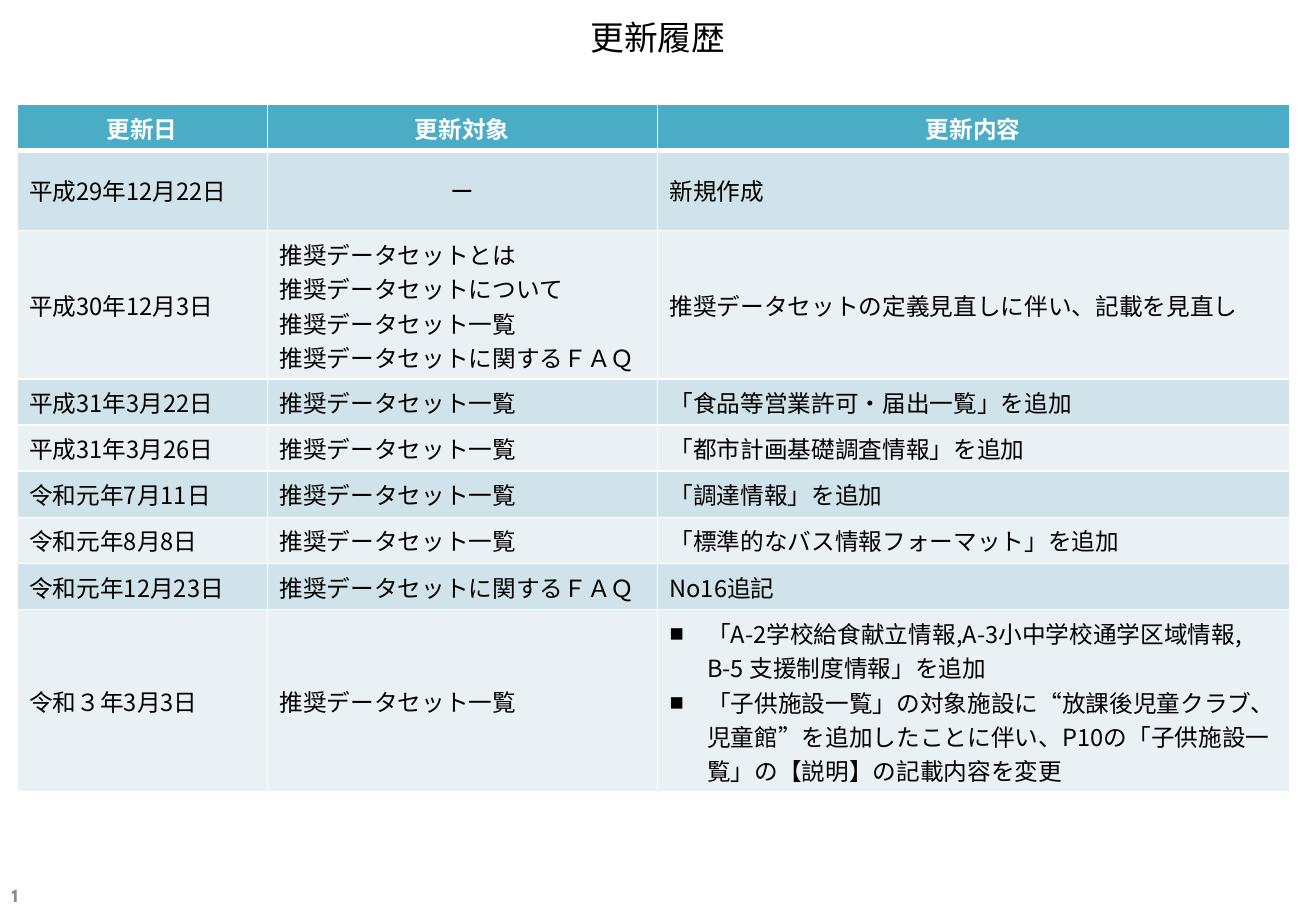
from lxml.etree import SubElement
from pptx import Presentation
from pptx.dml.color import RGBColor
from pptx.enum.text import MSO_ANCHOR, PP_ALIGN
from pptx.oxml.ns import qn
from pptx.util import Inches, Pt

FONT = "Noto Sans CJK JP"
BLACK = RGBColor(0x00, 0x00, 0x00)
WHITE = RGBColor(0xFF, 0xFF, 0xFF)
GRAY = RGBColor(0x8C, 0x8C, 0x8C)
TEAL = RGBColor(0x4B, 0xAC, 0xC6)
BANDS = [RGBColor(0xE9, 0xF1, 0xF5), RGBColor(0xD0, 0xE3, 0xEA)]


def style(para, size, color, bold=False, name=FONT, align=PP_ALIGN.LEFT):
    para.alignment = align
    font = para.font
    font.size, font.bold, font.name = Pt(size), bold, name
    font.color.rgb = color
    # East Asian typeface follows the Latin one
    props = para._p.pPr.find(qn("a:defRPr"))
    SubElement(props, qn("a:ea")).set("typeface", name)


def border(cell, side, width):
    line = SubElement(cell._tc.get_or_add_tcPr(), qn("a:ln" + side))
    line.set("w", str(Pt(width)))
    fill = SubElement(line, qn("a:solidFill"))
    SubElement(fill, qn("a:srgbClr")).set("val", str(WHITE))


prs = Presentation()
prs.slide_width, prs.slide_height = Inches(10.83), Inches(7.5)
slide = prs.slides.add_slide(prs.slide_layouts[6])

# Title and page number
labels = [
    ("更新履歴", (0.54, 0, 9.75, 0.61), 20, BLACK, False, FONT, PP_ALIGN.CENTER),
    ("1", (0, 7.24, 2.53, 0.26), 11.1, GRAY, True, "League Spartan", PP_ALIGN.LEFT),
]
for text, place, *look in labels:
    frame = slide.shapes.add_textbox(*map(Inches, place)).text_frame
    frame.word_wrap = True
    frame.vertical_anchor = MSO_ANCHOR.MIDDLE
    frame.text = text
    style(frame.paragraphs[0], *look)

# Update history: date, target, content
LIST = "推奨データセット一覧"
FAQ = "推奨データセットに関するＦＡＱ"
rows = [
    ("更新日", "更新対象", "更新内容"),
    ("平成29年12月22日", "ー", "新規作成"),
    ("平成30年12月3日",
     f"推奨データセットとは\n推奨データセットについて\n{LIST}\n{FAQ}",
     "推奨データセットの定義見直しに伴い、記載を見直し"),
    ("平成31年3月22日", LIST, "「食品等営業許可・届出一覧」を追加"),
    ("平成31年3月26日", LIST, "「都市計画基礎調査情報」を追加"),
    ("令和元年7月11日", LIST, "「調達情報」を追加"),
    ("令和元年8月8日", LIST, "「標準的なバス情報フォーマット」を追加"),
    ("令和元年12月23日", FAQ, "No16追記"),
    ("令和３年3月3日", LIST,
     "「A-2学校給食献立情報,A-3小中学校通学区域情報, B-5 支援制度情報」を追加\n"
     "「子供施設一覧」の対象施設に“放課後児童クラブ、児童館”を追加したことに伴い、"
     "P10の「子供施設一覧」の【説明】の記載内容を変更"),
]
widths = [2.06, 3.21, 5.2]
heights = [0.38, 0.66, 1.22] + [0.38] * 5 + [1.5]
table = slide.shapes.add_table(
    len(rows), len(widths), Inches(0.14), Inches(0.86),
    Inches(sum(widths)), Inches(sum(heights))).table
for col, width in zip(table.columns, widths):
    col.width = Inches(width)

for r, texts in enumerate(rows):
    table.rows[r].height = Inches(heights[r])
    head = r == 0
    for c, text in enumerate(texts):
        cell = table.cell(r, c)
        cell.vertical_anchor = MSO_ANCHOR.MIDDLE
        for side in "LRTB":
            thick = (head and side == "B") or (r == 1 and side == "T")
            border(cell, side, 3 if thick else 1)
        cell.fill.solid()
        cell.fill.fore_color.rgb = TEAL if head else BANDS[r % 2]
        cell.text = text
        for para in cell.text_frame.paragraphs:
            # Square bullets in the last content cell
            if r == len(rows) - 1 and c == 2:
                props = para._p.get_or_add_pPr()
                props.set("marL", str(Inches(0.31)))
                props.set("indent", str(-Inches(0.31)))
                SubElement(props, qn("a:buFont")).set("typeface", "Arial")
                SubElement(props, qn("a:buChar")).set("char", "■")
            center = head or text == "ー"
            style(para, 14, WHITE if head else BLACK, head,
                  align=PP_ALIGN.CENTER if center else PP_ALIGN.LEFT)

prs.save("out.pptx")
